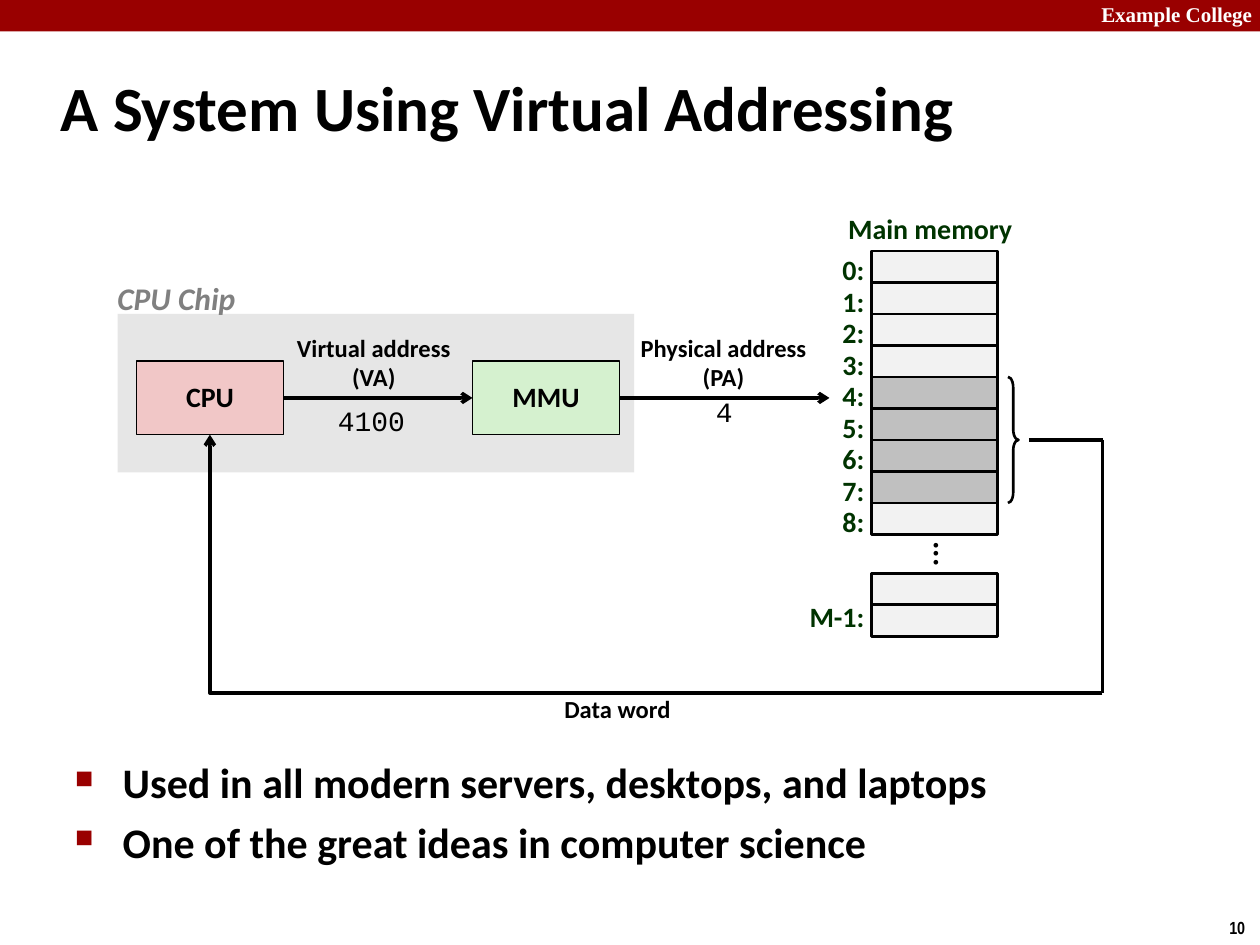
from lxml.etree import SubElement
from pptx import Presentation
from pptx.dml.color import RGBColor
from pptx.enum.shapes import MSO_CONNECTOR, MSO_SHAPE
from pptx.enum.text import MSO_ANCHOR, PP_ALIGN
from pptx.oxml.ns import qn
from pptx.util import Inches, Pt

LEFT, MID, RIGHT = PP_ALIGN.LEFT, PP_ALIGN.CENTER, PP_ALIGN.RIGHT
hue = RGBColor.from_string

deck = Presentation()
deck.slide_width, deck.slide_height = Inches(10), Inches(7.5)
slide = deck.slides.add_slide(deck.slide_layouts[6])
shapes = slide.shapes
UNIT = deck.slide_width / 120  # the slide is a grid of 120 columns by 90 rows


def block(col, row, wide, high, fill=None, edge=0, kind=MSO_SHAPE.RECTANGLE):
    """Add a preset shape at a grid place; edge is its line width."""
    shape = shapes.add_shape(kind, *(round(n * UNIT) for n in (col, row, wide, high)))
    shape.shadow.inherit = False
    if fill:
        shape.fill.solid()
        shape.fill.fore_color.rgb = hue(fill)
    else:
        shape.fill.background()
    if edge:
        shape.line.color.rgb = hue("000000")
        shape.line.width = Pt(edge)
    else:
        shape.line.fill.background()
    return shape


def write(place, text, size, color="000000", face="Calibri", bold=True,
          align=LEFT, lead=None, middle=False, wrap=False):
    """Write text into a shape, or into a new text box at a grid place."""
    if isinstance(place, tuple):
        place = shapes.add_textbox(*(round(n * UNIT) for n in place))
    frame = place.text_frame
    frame.text = text
    frame.word_wrap = wrap
    frame.vertical_anchor = MSO_ANCHOR.MIDDLE if middle else MSO_ANCHOR.TOP
    for para in frame.paragraphs:
        para.alignment = align
        para.line_spacing = lead
        font = para.font
        font.name, font.size, font.bold = face, Pt(size), bold
        font.color.rgb = hue(color)
    return frame


# Header, title and page number
block(0, 0, 120, 3, "990000")
write((103.7, -0.4, 17.2, 3.6), "Example College", 12, "FFFFFF", "Times New Roman")
write((4.6, 5, 114.4, 10.3), "A System Using Virtual Addressing", 36,
      middle=True, wrap=True)
write((115.9, 86.7, 4.1, 3.2), "10", 10, face="Arial Narrow")

# Bullets
points = write((5.95, 71.5, 109, 16.5),
               "Used in all modern servers, desktops, and laptops\n"
               "One of the great ideas in computer science", 24, wrap=True)
for para in points.paragraphs:
    para.space_before = Pt(5)
    props = para._p.get_or_add_pPr()
    props.set("marL", str(Inches(0.38)))
    props.set("indent", str(-Inches(0.38)))
    tint = SubElement(props, qn("a:buClr"))
    SubElement(tint, qn("a:srgbClr"), val="990000")
    SubElement(props, qn("a:buSzPct"), val="60000")
    SubElement(props, qn("a:buChar"), char="■")

# Chip with its two units
block(11.2, 29.9, 49.2, 15.1, "E6E6E6")
write((10, 26, 13.9, 4.8), "CPU Chip", 18, "808080").paragraphs[0].font.italic = True
units = []
for col, name, fill in ((13, "CPU", "F1C7C7"), (45, "MMU", "D5F1CF")):
    unit = block(col, 34.4, 14, 7, fill, 1)
    write(unit, name, 16, align=MID, lead=0.98, middle=True)
    units.append(unit)
cpu, mmu = units

# Main memory: cells 0 to 8, a gap, then the last two cells
TOP, CELL = 23.9, 3
write((79.5, 20, 18.2, 4), "Main memory", 16, "003300", align=MID, lead=0.88)
cells = [(TOP + CELL * n, f"{n}:", 4 <= n <= 7) for n in range(9)]
cells += [(54.6, "", False), (57.6, "M-1:", False)]
for row, name, used in cells:
    block(83, row, 12, CELL, "C0C0C0" if used else "F2F2F2", 1.5)
    if name:
        write((75.5, min(row, 56.9), 8, 4), name, 16, "003300",
              align=RIGHT, lead=0.88)
dots = write((84, 50.4, 12, 3), "...", 18, align=MID, lead=0.98, middle=True)
dots._txBody.bodyPr.set("vert", "eaVert")
brace = block(96, TOP + 4 * CELL, 1, 4 * CELL, edge=1.5, kind=MSO_SHAPE.RIGHT_BRACE)
brace.adjustments[0] = 1

# Address and data labels
for place, text in (((27, 31.2, 17.2, 6.8), "Virtual address\n(VA)"),
                    ((59.7, 31.2, 18.4, 6.8), "Physical address\n(PA)"),
                    ((52.5, 65.6, 12.6, 4), "Data word")):
    write(place, text, 14, align=MID, lead=0.98, middle=True)
for place, text in (((31, 37.8, 8.9, 4.4), "4100"), ((67, 37, 4.1, 4.4), "4")):
    write(place, text, 16, face="Courier New", bold=False)

# Wires: start, end, unit and side joined at each end, arrowhead
wires = (((27, 37.9), (45, 37.9), (cpu, 3), (mmu, 1), True),
         ((59, 37.9), (79, 37.9), (mmu, 3), None, True),
         ((98, 41.9), (105, 41.9), None, None, False),
         ((105, 41.9), (105, 66), None, None, False),
         ((105, 66), (20, 41.4), None, (cpu, 2), True))
for start, end, source, goal, arrow in wires:
    bent = start[0] != end[0] and start[1] != end[1]
    kind = MSO_CONNECTOR.ELBOW if bent else MSO_CONNECTOR.STRAIGHT
    wire = shapes.add_connector(kind, *(round(n * UNIT) for n in start + end))
    if source:
        wire.begin_connect(*source)
    if goal:
        wire.end_connect(*goal)
    wire.line.color.rgb = hue("000000")
    wire.line.width = Pt(2)
    props = wire._element.spPr
    if bent:
        props.find(qn("a:prstGeom")).set("prst", "bentConnector2")
    if arrow:
        SubElement(props.find(qn("a:ln")), qn("a:tailEnd"), type="arrow")
    SubElement(props, qn("a:effectLst"))

deck.save("out.pptx")
